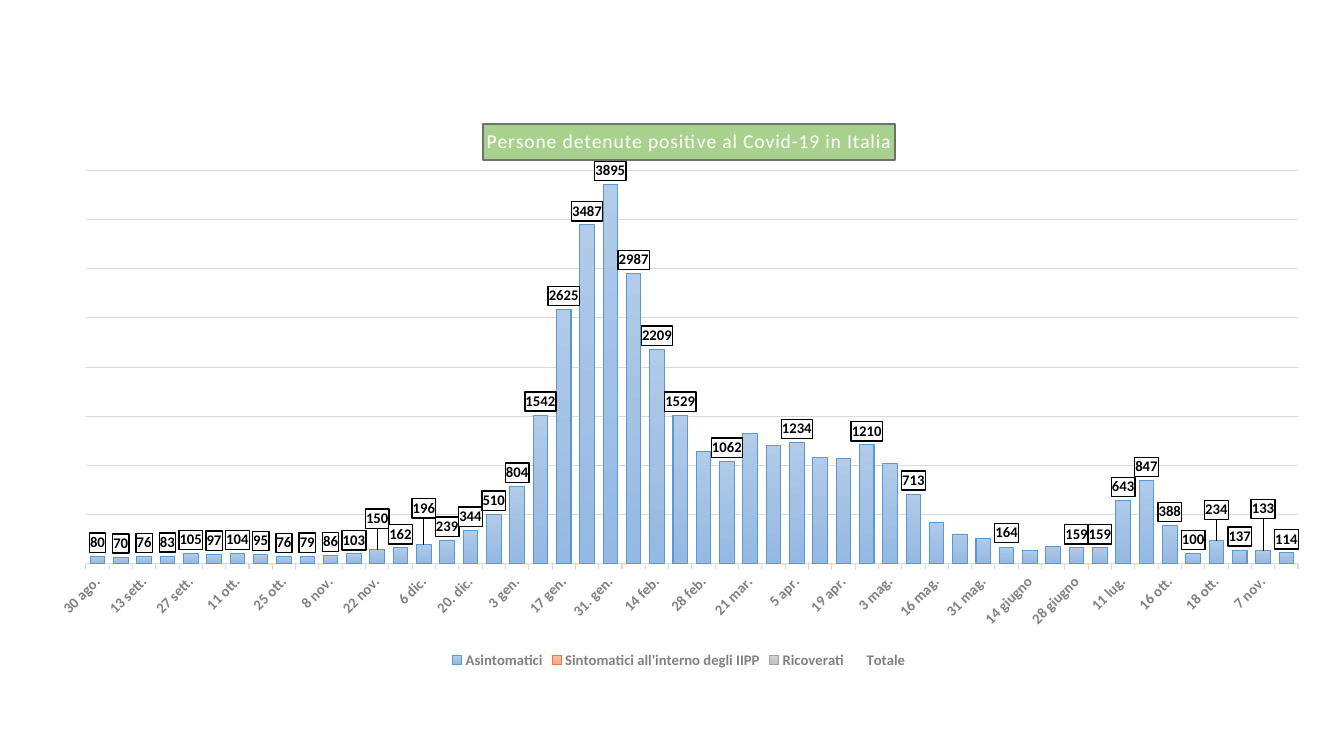
from pptx import Presentation
from pptx.chart.data import CategoryChartData
from pptx.dml.color import RGBColor
from pptx.enum.chart import XL_CHART_TYPE as ChartType, XL_LEGEND_POSITION as LegendPosition
from pptx.enum.chart import XL_TICK_MARK as TickMark
from pptx.oxml import parse_xml
from pptx.oxml.ns import nsdecls, qn
from pptx.util import Inches, Pt

BLACK = RGBColor(0x00, 0x00, 0x00)
WHITE = RGBColor(0xFF, 0xFF, 0xFF)
GRAY = RGBColor(0x80, 0x80, 0x80)
BORDER = RGBColor(0x70, 0x70, 0x70)
GRID = RGBColor(0xD9, 0xD9, 0xD9)
GREEN = RGBColor(0xA9, 0xD1, 0x8E)
BLUE_LINE = RGBColor(0x59, 0x98, 0xD0)
ORANGE_LINE = RGBColor(0xE8, 0x7A, 0x30)
SILVER_LINE = RGBColor(0xA1, 0xA1, 0xA1)
BLUES = [RGBColor(0xB1, 0xCB, 0xE9), RGBColor(0xA3, 0xC1, 0xE5), RGBColor(0x93, 0xB9, 0xE4)]
ORANGES = [RGBColor(0xF7, 0xBD, 0xA5), RGBColor(0xF5, 0xB1, 0x96), RGBColor(0xF8, 0xA5, 0x82)]
SILVERS = [RGBColor(0xD2, 0xD2, 0xD2), RGBColor(0xC8, 0xC8, 0xC8), RGBColor(0xC0, 0xC0, 0xC0)]

DATES = [
    "30 ago.", "6 sett.", "13 sett.", "20 sett.", "27 sett.", "4 ott.", "11 ott.", "18 ott.",
    "25 ott.", "1 nov.", "8 nov.", "15 nov.", "22 nov.", "29 nov.", "6 dic.", "13 dic.",
    "20. dic.", "27 dic.", "3 gen.", "10 gen.", "17 gen.", "24 gen.", "31. gen.", "7 feb.",
    "14 feb.", "21 feb.", "28 feb.", " 7 mar.", "21 mar.", "29 mar.", "5 apr.", "12 apr.",
    "19 apr.", "26 apr.", "3 mag.", "10 mag.", "16 mag.", "24 mag.", "31 mag.", "7 giugno",
    "14 giugno", "21 giugno", "28 giugno", "4 luglio", "11 lug.", "18 lug.", "16 ott.",
    "20 set.", "18 ott.", "31 ott.", "7 nov.", "15 nov."]
ASYMPTOMATIC = [
    75, 66, 71, 76, 100, 93, 100, 90, 71, 74, 81, 98, 146, 158, 193, 236, 339, 501, 786, 1511,
    2586, 3448, 3859, 2953, 2181, 1510, 1138, 1040, 1322, 1199, 1232, 1078, 1068, 1208, 1020,
    707, 417, 300, 254, 164, 130, 177, 158, 158, 642, 846, 385, 100, 233, 137, 130, 109]
TOTALS = [
    80, 70, 76, 83, 105, 97, 104, 95, 76, 79, 86, 103, 150, 162, 196, 239, 344, 510, 804, 1542,
    2625, 3487, 3895, 2987, 2209, 1529, 1160, 1062, 1341, 1208, 1234, 1080, 1069, 1210, 1022,
    713, 420, 302, 256, 164, 130, 178, 159, 159, 643, 847, 388, 100, 234, 137, 133, 114]
ZEROS = [0] * len(DATES)
SERIES = [
    ("Asintomatici", ASYMPTOMATIC, BLUES, BLUE_LINE),
    ("Sintomatici all'interno degli IIPP", ZEROS, ORANGES, ORANGE_LINE),
    ("Ricoverati", ZEROS, SILVERS, SILVER_LINE),
    ("Totale", TOTALS, None, None)]
# Vertical label shifts, as fractions of the chart height
TOTAL_SHIFTS = {12: -0.03, 14: -0.04, 16: 0, 48: -0.03, 50: -0.05}
TOTAL_HIDDEN = [26, 28, 29, 31, 32, 34, 36, 37, 38, 39, 40, 41]


class ChartSlide:
    font = "Calibri"

    def __init__(self, deck):
        self.page = deck.slides.add_slide(deck.slide_layouts[6])

    def style_font(self, font, size, color, bold=False):
        font.name, font.size, font.bold = self.font, Pt(size), bold
        font.color.rgb = color

    def stacked_columns(self, left, top, width, height):
        data = CategoryChartData()
        data.categories = DATES
        for name, values, _, _ in SERIES:
            data.add_series(name, values)
        frame = self.page.shapes.add_chart(
            ChartType.COLUMN_STACKED, Inches(left), Inches(top), Inches(width), Inches(height), data)
        chart = frame.chart
        self.style_font(chart.font, 10, BLACK)
        plot = chart.plots[0]
        plot.gap_width, plot.overlap, plot.vary_by_categories = 60, 100, False
        for series, (_, _, shades, line) in zip(plot.series, SERIES):
            self.color_series(series, shades, line)
        return chart

    def color_series(self, series, shades, line):
        series.invert_if_negative = False
        if shades is None:
            series.format.fill.background()
            series.format.line.fill.background()
            return
        series.format.line.color.rgb = line
        series.format.line.width = Pt(0.75)
        stops = "".join(f'<a:gs pos="{place * 50000}"><a:srgbClr val="{shade}"/></a:gs>'
                        for place, shade in enumerate(shades))
        gradient = parse_xml(f'<a:gradFill {nsdecls("a")} rotWithShape="1"><a:gsLst>{stops}</a:gsLst>'
                             '<a:lin ang="5400000" scaled="0"/></a:gradFill>')
        series._element.find(qn("c:spPr")).insert(0, gradient)

    def axes(self, chart):
        dates, values = chart.category_axis, chart.value_axis
        self.style_font(dates.tick_labels.font, 10.5, GRAY, True)
        dates.major_tick_mark = TickMark.OUTSIDE
        dates._element.find(qn("c:txPr")).find(qn("a:bodyPr")).set("rot", "-2700000")
        values.minimum_scale, values.maximum_scale, values.major_unit = 0, 4000, 500
        values.visible = False
        values.has_major_gridlines = True
        for line in (dates.format.line, values.major_gridlines.format.line):
            line.color.rgb, line.width = GRID, Pt(0.75)

    def legend(self, chart):
        chart.has_legend = True
        chart.legend.position = LegendPosition.BOTTOM
        chart.legend.include_in_layout = False
        self.style_font(chart.legend.font, 10.5, GRAY, True)

    def title(self, chart, text):
        title = chart.chart_title
        para = title.text_frame.paragraphs[0]
        span = para.add_run()
        span.text = text
        self.style_font(para.font, 14, WHITE)
        self.style_font(span.font, 14, WHITE)
        span.font._element.set("spc", "50")
        title.format.fill.solid()
        title.format.fill.fore_color.rgb = GREEN
        title.format.line.color.rgb = BORDER
        title.format.line.width = Pt(1.25)
        title.include_in_layout = False
        self.place(title._element, x=0.348, y=0.028)

    def plot_area(self, chart):
        area = chart._chartSpace.chart.plotArea
        self.place(area, inner=True, x=0.04, y=0.111, w=0.94, h=0.695)

    def place(self, element, inner=False, **fractions):
        """Give a chart part a manual position in fractions of the chart."""
        target = '<c:layoutTarget val="inner"/>' if inner else ""
        modes = '<c:xMode val="edge"/><c:yMode val="edge"/>'
        sizes = "".join(f'<c:{key} val="{value}"/>' for key, value in fractions.items())
        layout = parse_xml(f'<c:layout {nsdecls("c")}><c:manualLayout>{target}{modes}{sizes}'
                           '</c:manualLayout></c:layout>')
        old = element.find(qn("c:layout"))
        if old is not None:
            element.remove(old)
        text = element.find(qn("c:tx"))
        element.insert(0 if text is None else 1, layout)

    def boxed_labels(self, series, position, shifts, hidden=(), show_rest=True):
        """Show values in white boxes; shifts and hidden are keyed by point."""
        def flags(shown):
            names = ("LegendKey", "Val", "CatName", "SerName", "Percent", "BubbleSize")
            return "".join(f'<c:show{name} val="{int(shown and name == "Val")}"/>' for name in names)

        look = (f'<c:spPr><a:solidFill><a:srgbClr val="{WHITE}"/></a:solidFill><a:ln w="12700">'
                f'<a:solidFill><a:srgbClr val="{BLACK}"/></a:solidFill></a:ln></c:spPr>'
                '<c:txPr><a:bodyPr/><a:p><a:pPr><a:defRPr sz="1050" b="1"><a:solidFill>'
                f'<a:srgbClr val="{BLACK}"/></a:solidFill><a:latin typeface="{self.font}"/>'
                '</a:defRPr></a:pPr><a:endParaRPr lang="it-IT"/></a:p></c:txPr>'
                f'<c:dLblPos val="{position}"/>')
        points = ""
        for index in sorted([*shifts, *hidden]):
            body = '<c:delete val="1"/>'
            if index in shifts:
                body = ('<c:layout><c:manualLayout><c:x val="0"/>'
                        f'<c:y val="{shifts[index]}"/></c:manualLayout></c:layout>{look}{flags(True)}')
            points += f'<c:dLbl><c:idx val="{index}"/>{body}</c:dLbl>'
        labels = parse_xml(f'<c:dLbls {nsdecls("c", "a")}>{points}{look}{flags(show_rest)}</c:dLbls>')
        series._element.find(qn("c:cat")).addprevious(labels)


def main():
    deck = Presentation()
    deck.slide_width, deck.slide_height = Inches(13.33), Inches(7.5)
    slide = ChartSlide(deck)
    chart = slide.stacked_columns(0.34, 1.07, 12.79, 5.61)
    slide.axes(chart)
    slide.legend(chart)
    slide.title(chart, "Persone detenute positive al Covid-19 in Italia")
    slide.plot_area(chart)
    asymptomatic, _, _, total = chart.plots[0].series
    slide.boxed_labels(asymptomatic, "ctr", {39: -0.04}, show_rest=False)
    slide.boxed_labels(total, "inBase", TOTAL_SHIFTS, TOTAL_HIDDEN)
    deck.save("out.pptx")


if __name__ == "__main__":
    main()
